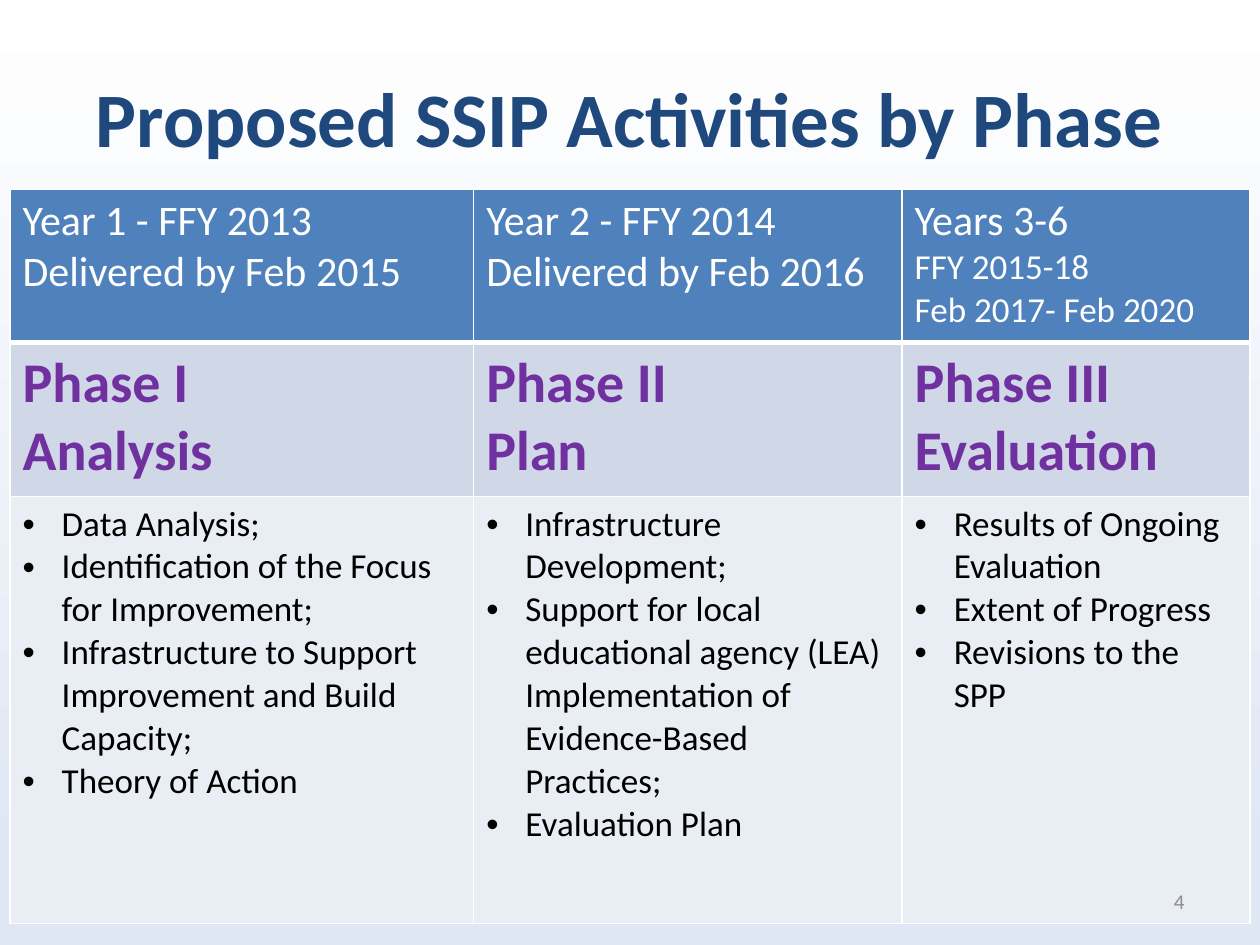
from dataclasses import dataclass

from lxml.etree import SubElement
from pptx import Presentation
from pptx.dml.color import RGBColor
from pptx.enum.text import MSO_ANCHOR as Anchor, PP_ALIGN as Align
from pptx.oxml.ns import qn
from pptx.slide import Slide
from pptx.table import _Cell as Cell
from pptx.text.text import _Paragraph as Paragraph
from pptx.util import Inches, Pt

WHITE = RGBColor(0xFF, 0xFF, 0xFF)
BLACK = RGBColor(0x00, 0x00, 0x00)
NAVY = RGBColor(0x1F, 0x49, 0x7D)
PURPLE = RGBColor(0x70, 0x30, 0xA0)
GRAY = RGBColor(0x8C, 0x8C, 0x8C)
HEADER_BLUE = RGBColor(0x4F, 0x81, 0xBD)
PHASE_BLUE = RGBColor(0xD0, 0xD8, 0xE8)
BODY_BLUE = RGBColor(0xE9, 0xED, 0xF4)
BACKGROUND_BLUE = RGBColor(0xDF, 0xE7, 0xF5)

HEADER_FONT = {"size": Pt(24), "bold": False}
PHASE_FONT = {"size": Pt(32), "bold": True}
BODY_FONT = {"size": Pt(20), "bold": False}
TITLE_FONT = {"size": Pt(44), "bold": True}
NUMBER_FONT = {"size": Pt(12), "bold": False}


@dataclass(frozen=True)
class PhaseColumn:
    width: float
    dates: list[str]
    phase: list[str]
    activities: list[str]
    detail_size: int = 24


@dataclass(frozen=True)
class RowStyle:
    height: float
    fill: RGBColor
    color: RGBColor
    font: dict
    bottom_border: float = 1
    bulleted: bool = False


COLUMNS = [
    PhaseColumn(3.68, ["Year 1 - FFY 2013", "Delivered by Feb 2015"], ["Phase I", "Analysis"],
                ["Data Analysis;", "Identification of the Focus for Improvement;",
                 "Infrastructure to Support Improvement and Build Capacity;", "Theory of Action"]),
    PhaseColumn(3.4, ["Year 2 - FFY 2014", "Delivered by Feb 2016"], ["Phase II", "Plan"],
                ["Infrastructure Development;",
                 "Support for local educational agency (LEA) Implementation of "
                 "Evidence-Based Practices;", "Evaluation Plan"]),
    PhaseColumn(2.76, ["Years 3-6", "FFY 2015-18", "Feb 2017- Feb 2020"],
                ["Phase III", "Evaluation"],
                ["Results of Ongoing Evaluation", "Extent of Progress", "Revisions to the SPP"],
                detail_size=20),
]
ROWS = [
    RowStyle(1.22, HEADER_BLUE, WHITE, HEADER_FONT, bottom_border=3),
    RowStyle(1.22, PHASE_BLUE, PURPLE, PHASE_FONT),
    RowStyle(3.39, BODY_BLUE, BLACK, BODY_FONT, bulleted=True),
]


def write(paragraph: Paragraph, text: str, font: dict, color: RGBColor) -> None:
    run = paragraph.add_run()
    run.text = text
    for name, value in {"name": "Calibri", **font}.items():
        setattr(run.font, name, value)
    run.font.color.rgb = color


def add_bullet(paragraph: Paragraph) -> None:
    properties = paragraph._p.get_or_add_pPr()
    indent = Inches(0.31)
    properties.set("marL", str(indent))
    properties.set("indent", str(-indent))
    SubElement(properties, qn("a:buFont"), typeface="Arial")
    SubElement(properties, qn("a:buChar"), char="•")


def set_borders(cell: Cell, top: float, bottom: float) -> None:
    """Draw white cell borders; call before the fill, which must follow them in the XML."""
    properties = cell._tc.get_or_add_tcPr()
    for side, width in {"L": 1, "R": 1, "T": top, "B": bottom}.items():
        line = SubElement(properties, qn(f"a:ln{side}"), w=str(Pt(width)))
        solid = SubElement(line, qn("a:solidFill"))
        SubElement(solid, qn("a:srgbClr"), val=str(WHITE))


def fill_cell(cell: Cell, lines: list[str], style: RowStyle, top: float,
              detail_size: int | None = None) -> None:
    set_borders(cell, top, style.bottom_border)
    cell.fill.solid()
    cell.fill.fore_color.rgb = style.fill
    frame = cell.text_frame
    for index, text in enumerate(lines):
        paragraph = frame.add_paragraph() if index else frame.paragraphs[0]
        font = style.font
        if index and detail_size:
            font = {**font, "size": Pt(detail_size)}
        write(paragraph, text, font, style.color)
        if style.bulleted:
            add_bullet(paragraph)


def add_phase_table(slide: Slide) -> None:
    width = sum(column.width for column in COLUMNS)
    height = sum(row.height for row in ROWS)
    table = slide.shapes.add_table(len(ROWS), len(COLUMNS), Inches(0.08), Inches(1.5),
                                   Inches(width), Inches(height)).table
    for row, style in zip(table.rows, ROWS):
        row.height = Inches(style.height)
    tops = [1] + [style.bottom_border for style in ROWS[:-1]]
    for index, column in enumerate(COLUMNS):
        table.columns[index].width = Inches(column.width)
        contents = [column.dates, column.phase, column.activities]
        sizes = [column.detail_size, None, None]
        for row, (lines, style, top, size) in enumerate(zip(contents, ROWS, tops, sizes)):
            fill_cell(table.cell(row, index), lines, style, top, size)


def add_text(slide: Slide, box: tuple[float, float, float, float], text: str,
             font: dict, color: RGBColor, align: Align) -> None:
    frame = slide.shapes.add_textbox(*map(Inches, box)).text_frame
    frame.word_wrap = True
    frame.vertical_anchor = Anchor.MIDDLE
    frame.paragraphs[0].alignment = align
    write(frame.paragraphs[0], text, font, color)


def set_background(slide: Slide) -> None:
    fill = slide.background.fill
    fill.gradient()
    fill.gradient_angle = 270
    stops = [(0, WHITE), (0.92, BACKGROUND_BLUE)]
    for stop, (position, color) in zip(fill.gradient_stops, stops):
        stop.position = position
        stop.color.rgb = color


def main() -> None:
    presentation = Presentation()
    presentation.slide_width, presentation.slide_height = Inches(10), Inches(7.5)
    slide = presentation.slides.add_slide(presentation.slide_layouts[6])
    set_background(slide)
    add_phase_table(slide)
    add_text(slide, (0.5, 0.3, 9, 1.25), "Proposed SSIP Activities by Phase",
             TITLE_FONT, NAVY, Align.CENTER)
    add_text(slide, (7.17, 6.95, 2.33, 0.4), "4", NUMBER_FONT, GRAY, Align.RIGHT)
    presentation.save("out.pptx")


if __name__ == "__main__":
    main()
